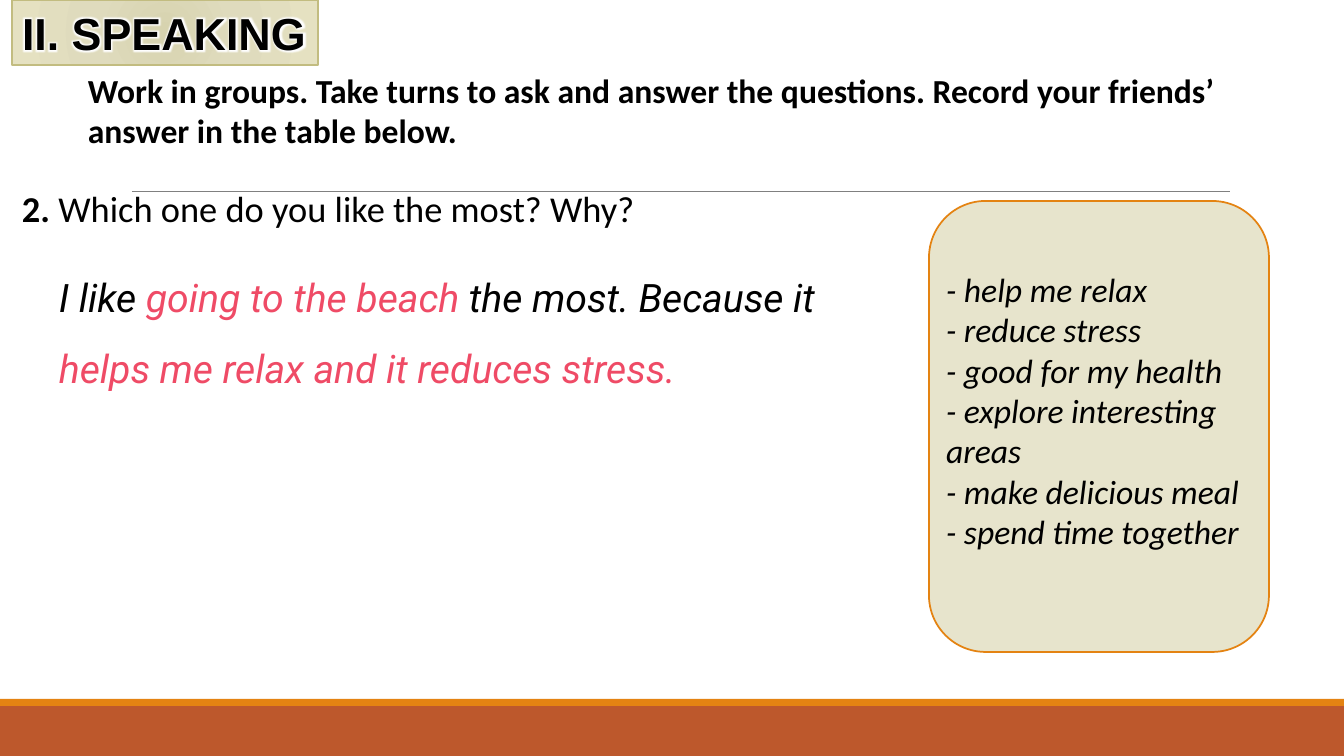
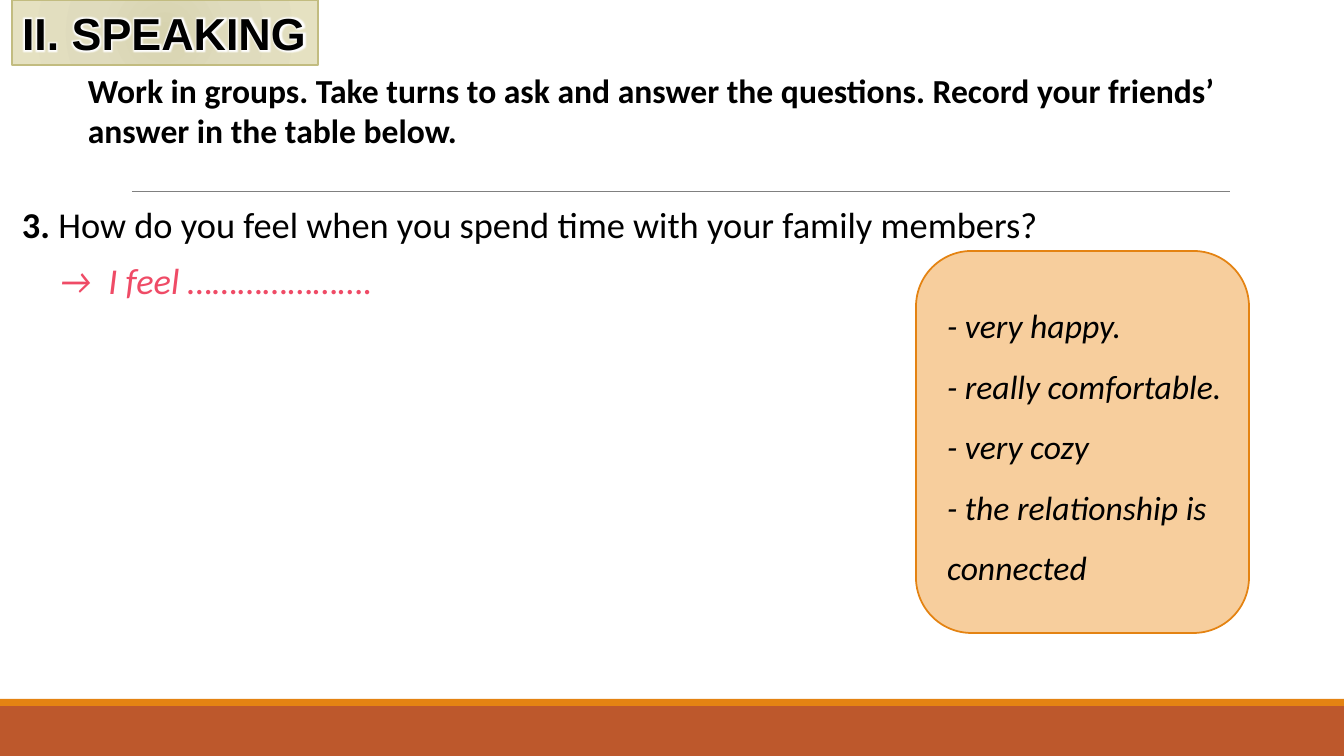
from pptx import Presentation
from pptx import util as u
from pptx.dml import color
from pptx.enum import shapes, text
from pptx.oxml import ns, parse_xml

PX_PER_INCH = 100.8
INK, PINK, ORANGE, RUST, GREY = "000000", "EF4B66", "E48312", "BD582C", "808080"
SAND, PEACH, KHAKI = "E7E4CC", "F7CE9D", "C2BC80"
TITLE_STOPS = {0: "D7D3AF", 45: "DFDBBD", 100: "E5E1C1"}
HINT = dict(size=u.Pt(24), italic=True)
TASK = ("Work in groups. Take turns to ask and answer the questions. "
        "Record your friends’ answer in the table below.")


def px(*lengths):
    return [round(length * u.Inches(1) / PX_PER_INCH) for length in lengths]


def rgb(value):
    return color.RGBColor.from_string(value)


def xml(tag, inner="", attributes=""):
    return parse_xml(f"<a:{tag} {ns.nsdecls('a')} {attributes}>{inner}</a:{tag}>")


def apply(target, values):
    for name, value in values.items():
        setattr(target, name, value)


class Deck:
    """Holds the shared style and the page being filled."""

    def __init__(self):
        self.file = Presentation()
        self.file.slide_width, self.file.slide_height = px(1344, 756)
        self.layout = self.file.slide_layouts[1]
        self.page = None

    def new_page(self):
        first = self.page is None
        self.page = self.file.slides.add_slide(self.layout)
        if first:
            self.furnish_layout()
        self.title("II. SPEAKING")
        self.note((78, 65, 1192, 92), [(TASK, {})], size=u.Pt(24), bold=True)

    def furnish_layout(self):
        """Move the bands and the rule from the first page to the layout."""
        for holder in list(self.layout.placeholders):
            if holder.placeholder_format.idx >= 10:
                self.layout.shapes.element.remove(holder.element)
        for item in (self.block((0, 706, 1344, 50), RUST),
                     self.block((0, 699, 1344, 7), ORANGE),
                     self.rule(132, 191, 1230, 191)):
            self.layout.shapes.element.append(item.element)

    def block(self, place, fill, kind=shapes.MSO_SHAPE.RECTANGLE):
        shape = self.page.shapes.add_shape(kind, *px(*place))
        shape.shadow.inherit = False
        shape.fill.solid()
        shape.fill.fore_color.rgb = rgb(fill)
        shape.line.fill.background()
        return shape

    def outline(self, shape, colour, points):
        shape.line.color.rgb = rgb(colour)
        shape.line.width = u.Pt(points)

    def rule(self, *ends):
        line = self.page.shapes.add_connector(shapes.MSO_CONNECTOR.STRAIGHT, *px(*ends))
        self.outline(line, GREY, 0.5)
        line.element.spPr.append(xml("effectLst"))
        return line

    def frame(self, box, place):
        apply(box, dict(zip(("left", "top", "width", "height"), px(*place))))
        apply(box.text_frame, dict(word_wrap=True, auto_size=text.MSO_AUTO_SIZE.NONE))

    def fill_para(self, para, spans, spacing=1.0, **style):
        """Fill a paragraph with (wording, style changes) spans."""
        apply(para, dict(alignment=text.PP_ALIGN.LEFT, line_spacing=spacing,
                         space_before=u.Pt(0)))
        for wording, changes in spans:
            span = para.add_run()
            span.text = wording
            values = {"name": "Calibri", "colour": INK, **style, **changes}
            span.font.color.rgb = rgb(values.pop("colour"))
            apply(span.font, values)

    def title(self, wording):
        box = self.page.shapes.title
        self.frame(box, (12, 0, 306, 65))
        box.text_frame.vertical_anchor = text.MSO_ANCHOR.MIDDLE
        stops = "".join(f'<a:gs pos="{at * 1000}"><a:srgbClr val="{tone}"/></a:gs>'
                        for at, tone in TITLE_STOPS.items())
        centre = " ".join(f'{side}="50000"' for side in "ltrb")
        box.element.spPr.append(xml(
            "gradFill", f'<a:gsLst>{stops}</a:gsLst>'
            f'<a:path path="circle"><a:fillToRect {centre}/></a:path>'))
        self.outline(box, KHAKI, 1)
        para = box.text_frame.paragraphs[0]
        self.fill_para(para, [(wording, {})], name="Arial", size=u.Pt(32), bold=True)
        glow = xml("effectLst", '<a:glow rad="63500"><a:srgbClr val="FFFFFF"/></a:glow>')
        para.runs[0]._r.rPr.find(ns.qn("a:solidFill")).addnext(glow)

    def note(self, place, spans, **style):
        box = self.page.shapes.add_textbox(*px(*place))
        self.frame(box, place)
        self.fill_para(box.text_frame.paragraphs[0], spans, **style)

    def question(self, top, number, wording):
        self.note((12, top, 1123, 54), [(f"{number}. ", dict(bold=True)), (wording, {})],
                  size=u.Pt(26))

    def hints(self, panel, fill, place, lines, spacing=1.0):
        """List the hints in the body placeholder, over a rounded panel."""
        back = self.block(panel, fill, shapes.MSO_SHAPE.ROUNDED_RECTANGLE)
        self.outline(back, ORANGE, 1.25)
        self.page.shapes.element.insert(2, back.element)
        body = self.page.placeholders[1]
        self.frame(body, place)
        body.text_frame.vertical_anchor = text.MSO_ANCHOR.TOP
        for index, line in enumerate(lines):
            para = body.text_frame.add_paragraph() if index else body.text_frame.paragraphs[0]
            self.fill_para(para, [(f"- {line}", {})], spacing, **HINT)
            settings = para._p.get_or_add_pPr()
            settings.set("marL", "0")
            settings.set("indent", "0")
            settings.append(xml("buNone"))


def main():
    deck = Deck()
    accent = dict(colour=PINK)

    deck.new_page()
    deck.question(181, 2, "Which one do you like the most? Why?")
    deck.note((49, 245, 855, 145),
              [("I like ", {}), ("going to the beach ", accent),
               ("the most. Because it ", {}),
               ("helps me relax and it reduces stress.", accent)],
              spacing=1.5, name="Roboto", size=u.Pt(28), italic=True)
    deck.hints((929, 201, 340, 451), SAND, (936, 264, 325, 295),
               ["help me relax", "reduce stress", "good for my health",
                "explore interesting areas", "make delicious meal", "spend time together"])

    deck.new_page()
    deck.question(197, 3, "How do you feel when you spend time with your family members?")
    deck.note((49, 253, 672, 54), [("→  I feel ………………….", accent)],
              size=u.Pt(26), italic=True)
    deck.hints((916, 251, 333, 382), PEACH, (937, 280, 311, 377),
               ["very happy.", "really comfortable.", "very cozy",
                "the relationship is connected"], spacing=1.5)

    deck.file.save("out.pptx")


if __name__ == "__main__":
    main()
